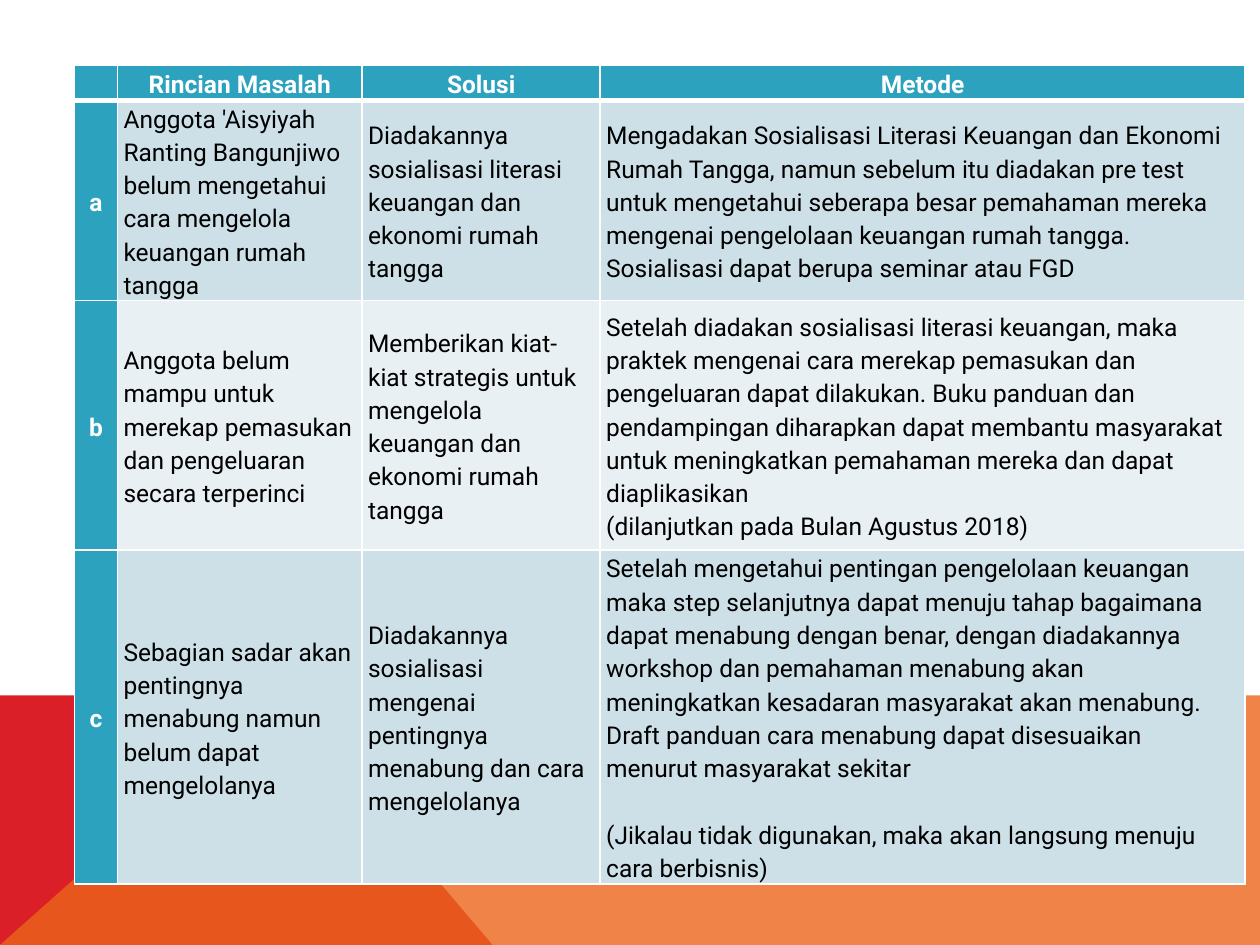
from lxml.etree import SubElement
from pptx import Presentation
from pptx.dml.color import RGBColor
from pptx.enum.text import MSO_ANCHOR, PP_ALIGN
from pptx.oxml.ns import qn
from pptx.util import Cm, Pt

WIDTH, HEIGHT = 25.4, 19.05
BAND_TOP = 14.02
COLUMNS = [0.87, 4.93, 4.8, 13]
ROWS = [0.67, 4.03, 5.03, 6.73]
HEADER = ["", "Rincian Masalah", "Solusi", "Metode"]
BODY = [
    ["a",
     "Anggota 'Aisyiyah Ranting Bangunjiwo belum mengetahui cara mengelola keuangan rumah tangga",
     "Diadakannya sosialisasi literasi keuangan dan ekonomi rumah tangga",
     "Mengadakan Sosialisasi Literasi Keuangan dan Ekonomi Rumah Tangga, namun sebelum itu "
     "diadakan pre test untuk mengetahui seberapa besar pemahaman mereka mengenai pengelolaan "
     "keuangan rumah tangga. Sosialisasi dapat berupa seminar atau FGD"],
    ["b",
     "Anggota belum mampu untuk merekap pemasukan dan pengeluaran secara terperinci",
     "Memberikan kiat-kiat strategis untuk mengelola keuangan dan ekonomi rumah tangga",
     "Setelah diadakan sosialisasi literasi keuangan, maka praktek mengenai cara merekap "
     "pemasukan dan pengeluaran dapat dilakukan. Buku panduan dan pendampingan diharapkan dapat "
     "membantu masyarakat untuk meningkatkan pemahaman mereka dan dapat diaplikasikan\n"
     "(dilanjutkan pada Bulan Agustus 2018)"],
    ["c",
     "Sebagian sadar akan pentingnya menabung namun belum dapat mengelolanya",
     "Diadakannya sosialisasi mengenai pentingnya menabung dan cara mengelolanya",
     "Setelah mengetahui pentingan pengelolaan keuangan maka step selanjutnya dapat menuju tahap "
     "bagaimana dapat menabung dengan benar, dengan diadakannya workshop dan pemahaman menabung "
     "akan meningkatkan kesadaran masyarakat akan menabung. Draft panduan cara menabung dapat "
     "disesuaikan menurut masyarakat sekitar\n"
     "(Jikalau tidak digunakan, maka akan langsung menuju cara berbisnis)"],
]


def rgb(value):
    """Return the colour for a hex string."""
    return RGBColor.from_string(value)


def write(tf, text, font="Roboto", size=14, color="000000", bold=False,
          align=PP_ALIGN.LEFT, spacing=1.15, gap=0):
    """Fill a text frame with one paragraph per line, with gap points between them."""
    for i, line in enumerate(text.split("\n")):
        p = tf.add_paragraph() if i else tf.paragraphs[0]
        p.alignment = align
        p.line_spacing = spacing
        p.space_before = Pt(gap if i else 0)
        r = p.add_run()
        r.text = line
        r.font.name = font
        r.font.size = Pt(size)
        r.font.bold = bold
        r.font.color.rgb = rgb(color)


class Deck:
    """Hold the style and the current slide."""

    accent, white, bands = "2DA2BF", "FFFFFF", ("CDE0E8", "E8F0F4")

    def __init__(self):
        """Start a presentation with one blank slide."""
        self.prs = Presentation()
        self.prs.slide_width, self.prs.slide_height = Cm(WIDTH), Cm(HEIGHT)
        self.s = self.prs.slides.add_slide(self.prs.slide_layouts[6])

    def polygon(self, points, color, alpha=100):
        """Draw a closed, filled outline."""
        start, *rest = [(Cm(x), Cm(y)) for x, y in points]
        builder = self.s.shapes.build_freeform(*start)
        builder.add_line_segments(rest, close=True)
        sp = builder.convert_to_shape()
        sp.shadow.inherit = False
        sp.fill.solid()
        sp.fill.fore_color.rgb = rgb(color)
        sp.line.fill.background()
        if alpha < 100:
            clr = sp.fill._xPr.find(qn("a:solidFill"))[0]
            SubElement(clr, qn("a:alpha"), val=str(alpha * 1000))

    def borders(self, cell, **widths):
        """Give a cell white borders, 1 pt unless a side is named."""
        tcPr = cell._tc.get_or_add_tcPr()
        for side in "LRTB":
            ln = SubElement(tcPr, qn(f"a:ln{side}"), w=str(Pt(widths.get(side, 1))))
            fill = SubElement(ln, qn("a:solidFill"))
            SubElement(fill, qn("a:srgbClr"), val=self.white)

    def cell(self, cell, text, fill, widths, **style):
        """Format and fill one table cell."""
        self.borders(cell, **widths)
        cell.fill.solid()
        cell.fill.fore_color.rgb = rgb(fill)
        cell.vertical_anchor = MSO_ANCHOR.MIDDLE
        cell.margin_left = cell.margin_right = Cm(0.12)
        cell.margin_top = cell.margin_bottom = 0
        write(cell.text_frame, text, **style)

    def table(self, left, top, columns, rows, data):
        """Add a table with a header row and a header column."""
        frame = self.s.shapes.add_table(len(rows), len(columns), Cm(left), Cm(top),
                                        Cm(sum(columns)), Cm(sum(rows)))
        table = frame.table
        for column, width in zip(table.columns, columns):
            column.width = Cm(width)
        for row, height in zip(table.rows, rows):
            row.height = Cm(height)
        heading = dict(color=self.white, bold=True, align=PP_ALIGN.CENTER)
        for i, texts in enumerate(data):
            widths = {0: {"B": 3}, 1: {"T": 3}}.get(i, {})
            for j, text in enumerate(texts):
                is_heading = i == 0 or j == 0
                fill = self.accent if is_heading else self.bands[(i - 1) % 2]
                style = heading if is_heading else dict(gap=19 if i == 3 else 0)
                self.cell(table.cell(i, j), text, fill, widths, **style)


def main():
    """Build the slide and save it."""
    deck = Deck()
    deck.polygon([(0, HEIGHT), (0, BAND_TOP), (5.66, BAND_TOP), (9.93, HEIGHT)], "DA1F28")
    deck.polygon([(0, HEIGHT), (5.66, BAND_TOP), (WIDTH, BAND_TOP), (WIDTH, HEIGHT)],
                 "EB641B", alpha=80)
    deck.table(1.5, 1.32, COLUMNS, ROWS, [HEADER, *BODY])
    deck.prs.save("out.pptx")


if __name__ == "__main__":
    main()
